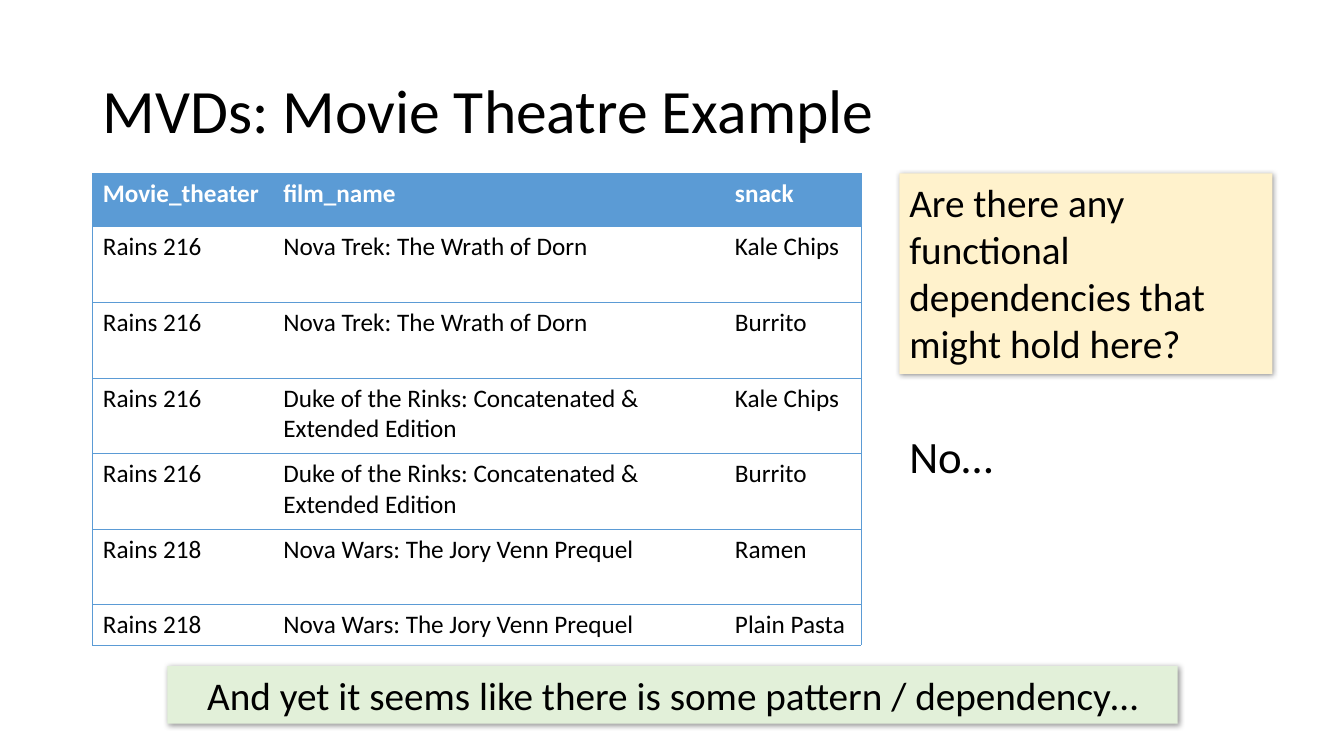
from dataclasses import dataclass

from lxml.etree import SubElement
from pptx import Presentation
from pptx.dml.color import RGBColor
from pptx.enum.shapes import MSO_SHAPE
from pptx.enum.text import MSO_ANCHOR, PP_ALIGN
from pptx.oxml.ns import qn
from pptx.util import Inches, Pt


@dataclass(frozen=True)
class Theme:
    font: str = "Calibri"
    ink: str = "000000"
    paper: str = "FFFFFF"
    accent: str = "5B9BD5"
    question: str = "FFF2CC"
    remark: str = "E2F0D9"
    title_size: int = 44
    answer_size: int = 32
    callout_size: int = 28
    table_size: int = 18


THEME = Theme()

SHOWINGS = [
    ("Movie_theater", "film_name", "snack"),
    ("Rains 216", "Nova Trek: The Wrath of Dorn", "Kale Chips"),
    ("Rains 216", "Nova Trek: The Wrath of Dorn", "Burrito"),
    ("Rains 216", "Duke of the Rinks: Concatenated & Extended Edition", "Kale Chips"),
    ("Rains 216", "Duke of the Rinks: Concatenated & Extended Edition", "Burrito"),
    ("Rains 218", "Nova Wars: The Jory Venn Prequel", "Ramen"),
    ("Rains 218", "Nova Wars: The Jory Venn Prequel", "Plain Pasta"),
]
COLUMN_WIDTHS = [1.79, 4.48, 1.35]
ROW_HEIGHTS = [0.53] + [0.75] * 5 + [0.4]


def write(frame, text, size, color=THEME.ink, bold=False, align=PP_ALIGN.LEFT,
          anchor=MSO_ANCHOR.TOP, wrap=True, spacing=1.0):
    frame.word_wrap = wrap
    frame.vertical_anchor = anchor
    paragraph = frame.paragraphs[0]
    paragraph.alignment = align
    paragraph.line_spacing = spacing
    run = paragraph.add_run()
    run.text = text
    run.font.name = THEME.font
    run.font.size = Pt(size)
    run.font.bold = bold
    run.font.color.rgb = RGBColor.from_string(color)


def add_label(slide, box, text, size, **text_format):
    label = slide.shapes.add_textbox(*map(Inches, box))
    write(label.text_frame, text, size, **text_format)


def add_shadow(shape):
    shape.shadow.inherit = False
    effects = shape._element.spPr.find(qn("a:effectLst"))
    shadow = SubElement(effects, qn("a:outerShdw"), blurRad=str(Pt(4)),
                        dist=str(Pt(1)), dir="2700000", algn="tl", rotWithShape="0")
    tint = SubElement(shadow, qn("a:srgbClr"), val=THEME.ink)
    SubElement(tint, qn("a:alpha"), val="40000")


def add_callout(slide, box, text, fill, **text_format):
    callout = slide.shapes.add_shape(MSO_SHAPE.RECTANGLE, *map(Inches, box))
    callout.fill.solid()
    callout.fill.fore_color.rgb = RGBColor.from_string(fill)
    callout.line.fill.background()
    add_shadow(callout)
    write(callout.text_frame, text, THEME.callout_size, **text_format)


def set_borders(cell, visible):
    properties = cell._tc.get_or_add_tcPr()
    for side in "LRTB":
        border = SubElement(properties, qn(f"a:ln{side}"), w=str(Pt(0.5)))
        if side in visible:
            paint = SubElement(border, qn("a:solidFill"))
            SubElement(paint, qn("a:srgbClr"), val=THEME.accent)
        else:
            SubElement(border, qn("a:noFill"))


def add_showings(slide, left, top):
    frame = slide.shapes.add_table(
        len(SHOWINGS), len(COLUMN_WIDTHS), Inches(left), Inches(top),
        Inches(sum(COLUMN_WIDTHS)), Inches(sum(ROW_HEIGHTS)))
    table = frame.table
    table.horz_banding = False
    for column, width in zip(table.columns, COLUMN_WIDTHS):
        column.width = Inches(width)
    for row, height in zip(table.rows, ROW_HEIGHTS):
        row.height = Inches(height)
    outer_sides = {0: "L", len(COLUMN_WIDTHS) - 1: "R"}
    for row_index, showing in enumerate(SHOWINGS):
        header = row_index == 0
        for column_index, text in enumerate(showing):
            cell = table.cell(row_index, column_index)
            set_borders(cell, "TB" + outer_sides.get(column_index, ""))
            if header:
                cell.fill.solid()
                cell.fill.fore_color.rgb = RGBColor.from_string(THEME.accent)
            else:
                cell.fill.background()
            write(cell.text_frame, text, THEME.table_size, bold=header,
                  color=THEME.paper if header else THEME.ink)


def main():
    deck = Presentation()
    deck.slide_width = Inches(13.33)
    deck.slide_height = Inches(7.5)
    slide = deck.slides.add_slide(deck.slide_layouts[6])

    add_label(slide, (0.92, 0.4, 11.5, 1.45), "MVDs: Movie Theatre Example",
              THEME.title_size, anchor=MSO_ANCHOR.MIDDLE, spacing=0.9)
    add_showings(slide, 0.92, 1.72)
    add_callout(slide, (8.92, 1.72, 3.7, 1.99),
                "Are there any functional dependencies that might hold here?",
                THEME.question)
    add_callout(slide, (1.66, 6.61, 10.02, 0.57),
                "And yet it seems like there is some pattern / dependency…",
                THEME.remark, align=PP_ALIGN.CENTER)
    add_label(slide, (8.92, 4.2, 1.04, 0.64), "No…", THEME.answer_size, wrap=False)

    deck.save("out.pptx")


if __name__ == "__main__":
    main()
